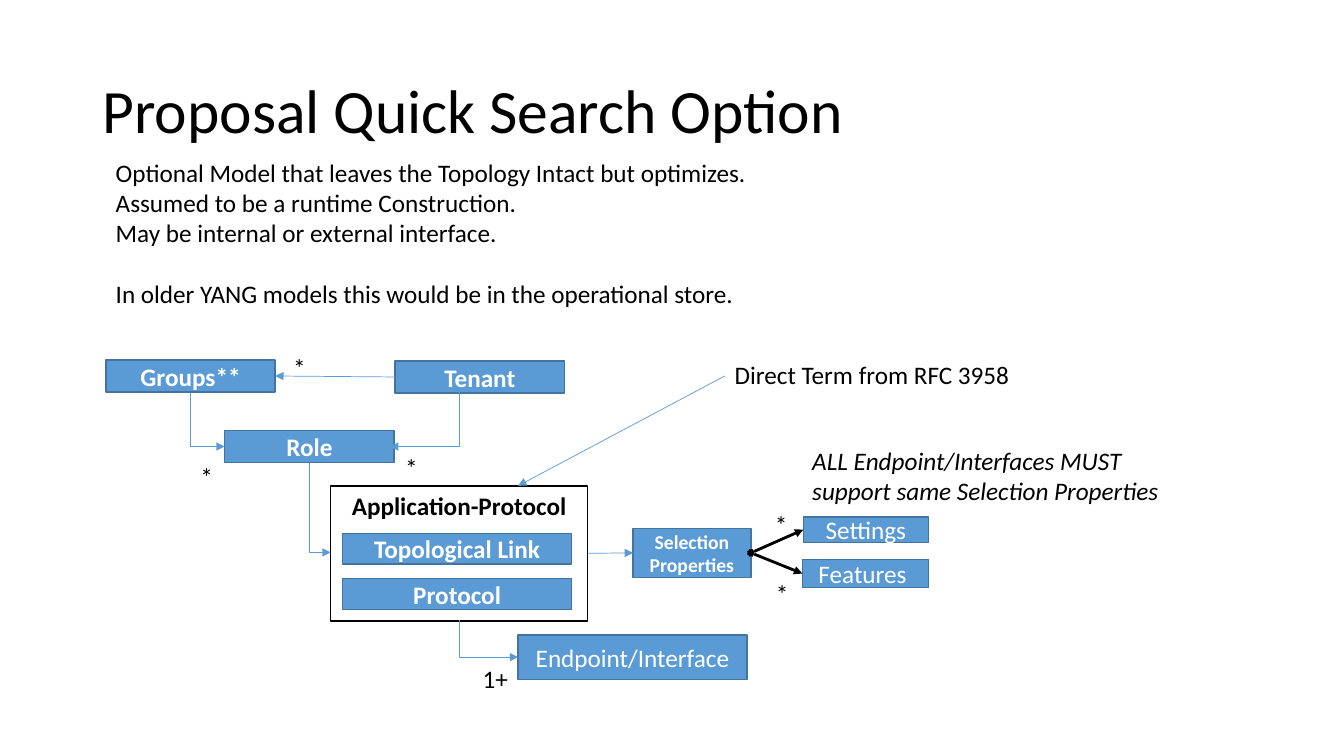
from lxml import etree
from pptx import Presentation
from pptx import util as u
from pptx.dml.color import RGBColor
from pptx.enum import shapes, text
from pptx.oxml import ns

# Grid: ten columns and ten rows to the inch
CELL = u.Inches(0.1)
COLUMNS, ROWS = 133.33, 75
FONT = "Calibri"
COLORS = {"black": "000000", "white": "FFFFFF", "blue": "5B9BD5", "edge": "43739E"}
TOP, LEFT, BOTTOM, RIGHT = range(4)  # connection sites of a rectangle


def grid(cells):
    return u.Emu(round(cells * CELL))


def color(name):
    return RGBColor.from_string(COLORS[name])


def write(frame, lines, size=18, ink="black", bold=False, italic=False, align=None):
    frame.text = lines
    for para in frame.paragraphs:
        para.alignment = align
        for span in para.runs:
            span.font.name = FONT
            span.font.size = u.Pt(size)
            span.font.bold = bold
            span.font.italic = italic
            span.font.color.rgb = color(ink)


def add_label(page, place, lines, wrap=False, anchor=text.MSO_ANCHOR.TOP, **style):
    box = page.shapes.add_textbox(*map(grid, place))
    frame = box.text_frame
    frame.word_wrap = wrap
    frame.vertical_anchor = anchor
    write(frame, lines, **style)
    return frame


def add_block(page, place, label, fill="blue", edge="edge", ink="white",
              anchor=text.MSO_ANCHOR.MIDDLE, **style):
    box = page.shapes.add_shape(shapes.MSO_SHAPE.RECTANGLE, *map(grid, place))
    box.shadow.inherit = False
    if fill:
        box.fill.solid()
        box.fill.fore_color.rgb = color(fill)
    else:
        box.fill.background()
    box.line.color.rgb = color(edge)
    box.line.width = u.Pt(1)
    box.text_frame.vertical_anchor = anchor
    write(box.text_frame, label, ink=ink, align=text.PP_ALIGN.CENTER, **style)
    return box


def style_line(line, ink="blue", width=0.5, head=None):
    line.line.color.rgb = color(ink)
    line.line.width = u.Pt(width)
    stroke = line.line._get_or_add_ln()
    if head:
        etree.SubElement(stroke, ns.qn("a:headEnd"), type=head)
    etree.SubElement(stroke, ns.qn("a:tailEnd"), type="triangle")
    etree.SubElement(line._element.spPr, ns.qn("a:effectLst"))


def add_arrow(page, start, end, **style):
    line = page.shapes.add_connector(
        shapes.MSO_CONNECTOR.STRAIGHT, *map(grid, start + end))
    style_line(line, **style)
    return line


def join(page, source, source_side, target, target_side, **style):
    line = add_arrow(page, (0, 0), (1, 1), **style)
    line.begin_connect(source, source_side)
    line.end_connect(target, target_side)


def add_elbow(page, start, end):
    """Arrow that runs down first, then sideways: a turned one-bend connector."""
    (x1, y1), (x2, y2) = start, end
    width, height = abs(y2 - y1), abs(x2 - x1)
    left, top = (x1 + x2 - width) / 2, (y1 + y2 - height) / 2
    line = page.shapes.add_connector(
        shapes.MSO_CONNECTOR.ELBOW,
        *map(grid, (left, top, left + width, top + height)))
    properties = line._element.spPr
    properties.find(ns.qn("a:prstGeom")).set("prst", "bentConnector2")
    frame = properties.find(ns.qn("a:xfrm"))
    if x2 > x1:
        frame.set("rot", str(270 * 60000))
        frame.set("flipH", "1")
    else:
        frame.set("rot", str(90 * 60000))
    style_line(line)


def main():
    deck = Presentation()
    deck.slide_width, deck.slide_height = grid(COLUMNS), grid(ROWS)
    page = deck.slides.add_slide(deck.slide_layouts[6])

    # Title and introduction
    title = add_label(page, (9.2, 4, 115, 14.5), "Proposal Quick Search Option",
                      wrap=True, anchor=text.MSO_ANCHOR.MIDDLE, size=44)
    title.paragraphs[0].line_spacing = 0.9
    intro = add_label(page, (10.5, 15.1, 65.3, 19.2), "\n".join([
        "Optional Model that leaves the Topology Intact but optimizes.",
        "Assumed to be a runtime Construction.",
        "May be internal or external interface.",
        "In older YANG models this would be in the operational store."]))
    intro.paragraphs[-1].space_before = u.Pt(21.6)

    # Model blocks
    add_block(page, (22.3, 42.7, 16.8, 3.2), "Role", bold=True)
    groups = add_block(page, (10.5, 35.7, 16.8, 3.2), "Groups**", bold=True)
    tenant = add_block(page, (39.2, 35.8, 16.8, 3.2), "Tenant", bold=True)
    for top, label in ((52.9, "Topological Link"), (57.4, "Protocol")):
        add_block(page, (34, top, 22.7, 3.05), label, bold=True)
    application = add_block(page, (32.8, 48.2, 25.5, 13.4), "Application-Protocol",
                            fill=None, edge="black", ink="black", bold=True,
                            anchor=text.MSO_ANCHOR.TOP)
    add_block(page, (51.4, 63, 22.7, 4.4), "Endpoint/Interface")
    selection = add_block(page, (62.8, 52.4, 11.7, 4.9), "Selection Properties",
                          size=14, bold=True)
    features = add_block(page, (79.6, 55.5, 12.5, 2.8), "Features ")
    settings = add_block(page, (79.7, 51.3, 12.4, 2.5), "Settings")

    # Elbow arrows
    for start, end in (
            ((45.6, 38.9), (38.7, 44.3)),   # Tenant to Role
            ((18.9, 39), (22.3, 44.3)),     # Groups to Role
            ((30.7, 45.9), (32.8, 54.8)),   # Role to Application-Protocol
            ((45.6, 61.5), (51.4, 65.2))):  # Application-Protocol to Endpoint
        add_elbow(page, start, end)

    # Straight arrows
    join(page, tenant, LEFT, groups, RIGHT)
    join(page, application, RIGHT, selection, LEFT)
    for target in (settings, features):
        join(page, selection, RIGHT, target, LEFT,
             ink="black", width=2, head="diamond")
    add_arrow(page, (71.9, 37.3), (51.4, 48.2))

    # Multiplicities
    for left, top in ((28.1, 34.5), (39.2, 44.4), (18.9, 45.3), (75.9, 50), (76, 56.9)):
        add_label(page, (left, top, 3.3, 4), "*")
    add_label(page, (46.9, 65.3, 4.6, 4), "1+")

    # Remarks
    add_label(page, (71.9, 35.2, 29.6, 4), "Direct Term from RFC 3958")
    add_label(page, (79.6, 43.7, 39.6, 7.1),
              "ALL Endpoint/Interfaces MUST support same Selection Properties",
              wrap=True, italic=True)

    deck.save("out.pptx")


if __name__ == "__main__":
    main()
